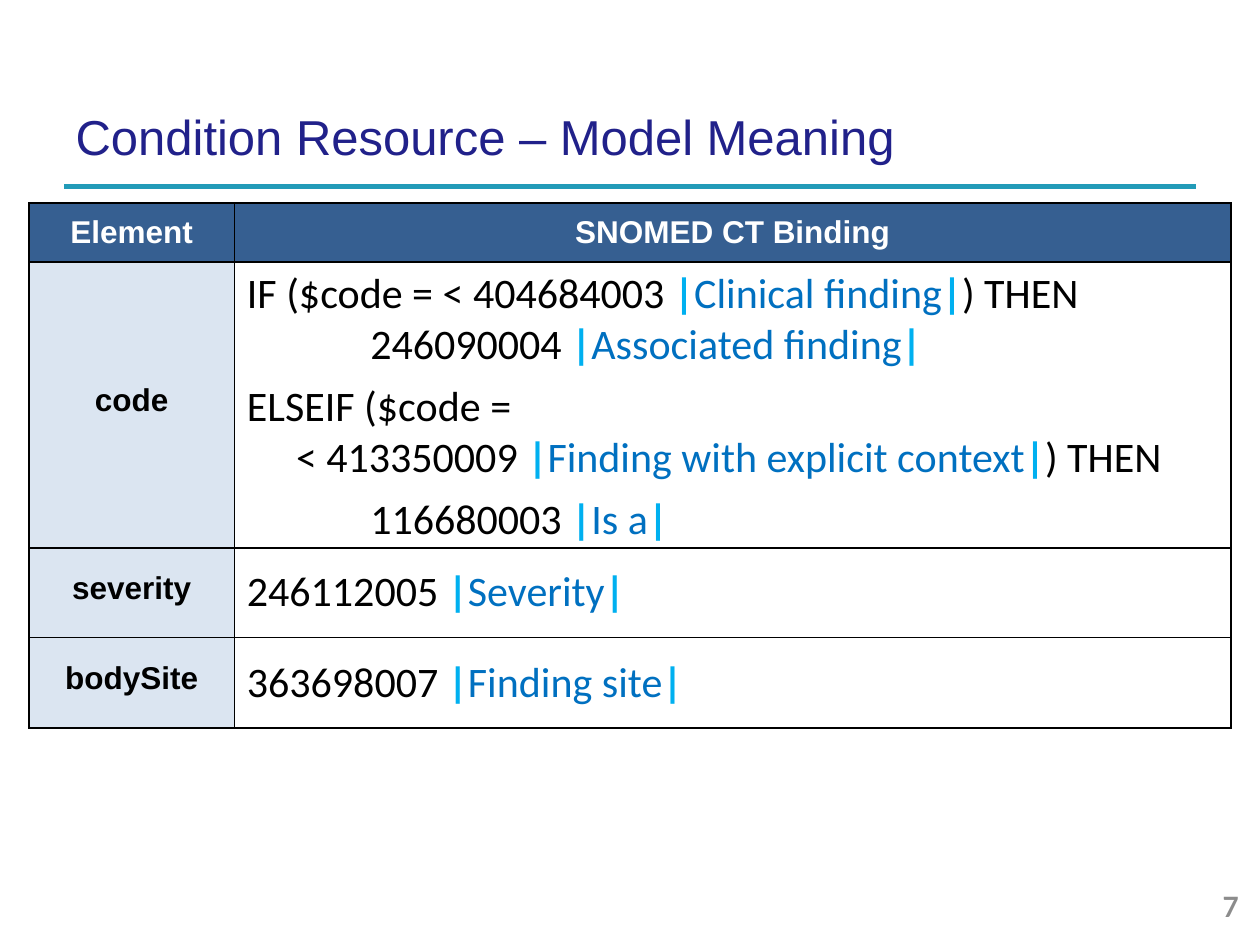
from lxml.etree import SubElement
from pptx import Presentation
from pptx.dml.color import RGBColor
from pptx.enum.shapes import MSO_CONNECTOR
from pptx.enum.text import MSO_ANCHOR, MSO_AUTO_SIZE, PP_ALIGN
from pptx.oxml.ns import qn
from pptx.util import Inches, Pt

HEADERS = ["Element", "SNOMED CT Binding"]
# Each binding line: text with a |term|, left margin, first-line indent, space before, alignment
JUSTIFIED, LEFT = PP_ALIGN.JUSTIFY, PP_ALIGN.LEFT
BINDINGS = {
    "code": [
        ("IF ($code = < 404684003 |Clinical finding|) THEN", 0.33, -0.33, 0, JUSTIFIED),
        ("246090004 |Associated finding|", 0.98, 0, 0, JUSTIFIED),
        ("ELSEIF ($code = ", 0.33, -0.33, 6, JUSTIFIED),
        ("< 413350009 |Finding with explicit context|) THEN", 0.33, 0.06, 0, JUSTIFIED),
        ("116680003 |Is a|", 0.98, 0, 6, LEFT),
    ],
    "severity": [("246112005 |Severity|", 0.13, -0.13, 0, JUSTIFIED)],
    "bodySite": [("363698007 |Finding site|", 0.13, -0.13, 0, JUSTIFIED)],
}
COLUMN_WIDTHS = [1.63, 7.91]
ROW_HEIGHTS = [0.47, 2.27, 0.71, 0.72]


def color(value):
    return RGBColor.from_string(value)


def set_values(target, values):
    for name, value in values.items():
        setattr(target, name, value)


class SlideBuilder:
    title_font = {"name": "Arial", "size": Pt(28), "bold": False}
    number_font = {"name": "Lato", "size": Pt(16), "bold": True}
    label_font = {"name": "Arial", "size": Pt(18), "bold": True}
    code_font = {"name": "Calibri", "size": Pt(24), "bold": False}
    bar_font = {**code_font, "bold": True}
    label_format = {"alignment": PP_ALIGN.CENTER, "space_before": Pt(2), "space_after": Pt(2)}

    def __init__(self, slide):
        self.slide = slide

    def add_run(self, paragraph, text, font, font_color):
        run = paragraph.add_run()
        run.text = text
        set_values(run.font, font)
        run.font.color.rgb = color(font_color)

    def title(self, text, left, top, width, height):
        shape = self.slide.shapes.title
        set_values(shape, {"left": Inches(left), "top": Inches(top),
                           "width": Inches(width), "height": Inches(height)})
        set_values(shape.text_frame, {
            "vertical_anchor": MSO_ANCHOR.BOTTOM, "word_wrap": True,
            "auto_size": MSO_AUTO_SIZE.NONE,
            "margin_left": Inches(0.1), "margin_right": Inches(0.1),
            "margin_top": Inches(0.1), "margin_bottom": Inches(0.1)})
        paragraph = shape.text_frame.paragraphs[0]
        paragraph.alignment = PP_ALIGN.LEFT
        self.add_run(paragraph, text, self.title_font, "21218A")

    def rule(self, left, right, top):
        connector = self.slide.shapes.add_connector(
            MSO_CONNECTOR.STRAIGHT, Inches(left), Inches(top), Inches(right), Inches(top))
        connector.line.color.rgb = color("229BB8")
        connector.line.width = Pt(3)
        SubElement(connector._element.spPr, qn("a:effectLst"))

    def page_number(self, text, left, top, width, height):
        box = self.slide.shapes.add_textbox(
            Inches(left), Inches(top), Inches(width), Inches(height))
        set_values(box.text_frame, {"word_wrap": True, "vertical_anchor": MSO_ANCHOR.MIDDLE})
        paragraph = box.text_frame.paragraphs[0]
        paragraph.alignment = PP_ALIGN.RIGHT
        self.add_run(paragraph, text, self.number_font, "8C8C8C")

    def format_cell(self, cell, fill):
        """Centre the text vertically, then draw 1 pt black borders and the fill."""
        cell.vertical_anchor = MSO_ANCHOR.MIDDLE
        properties = cell._tc.get_or_add_tcPr()
        for side in ("a:lnL", "a:lnR", "a:lnT", "a:lnB"):
            line = SubElement(properties, qn(side), w=str(Pt(1)))
            SubElement(SubElement(line, qn("a:solidFill")), qn("a:srgbClr"), val="000000")
        cell.fill.solid()
        cell.fill.fore_color.rgb = color(fill)

    def label_cell(self, cell, text, font_color, fill, line_spacing=None):
        self.format_cell(cell, fill)
        paragraph = cell.text_frame.paragraphs[0]
        set_values(paragraph, {**self.label_format, "line_spacing": line_spacing})
        self.add_run(paragraph, text, self.label_font, font_color)

    def binding_cell(self, cell, lines):
        self.format_cell(cell, "FFFFFF")
        frame = cell.text_frame
        for index, (text, margin, indent, space_before, alignment) in enumerate(lines):
            paragraph = frame.add_paragraph() if index else frame.paragraphs[0]
            set_values(paragraph, {"alignment": alignment, "space_before": Pt(space_before)})
            properties = paragraph._p.get_or_add_pPr()
            properties.set("marL", str(Inches(margin)))
            properties.set("indent", str(Inches(indent)))
            self.add_expression(paragraph, text)

    def add_expression(self, paragraph, text):
        """Write a line whose |term| is blue between bold light blue bars."""
        code, bar, rest = text.partition("|")
        self.add_run(paragraph, code, self.code_font, "000000")
        if bar:
            term, bar, tail = rest.partition("|")
            self.add_run(paragraph, bar, self.bar_font, "00B0F0")
            self.add_run(paragraph, term, self.code_font, "0070C0")
            self.add_run(paragraph, bar, self.bar_font, "00B0F0")
            if tail:
                self.add_run(paragraph, tail, self.code_font, "000000")

    def binding_table(self, left, top):
        table = self.slide.shapes.add_table(
            len(ROW_HEIGHTS), len(COLUMN_WIDTHS), Inches(left), Inches(top),
            Inches(sum(COLUMN_WIDTHS)), Inches(sum(ROW_HEIGHTS))).table
        set_values(table, {"first_row": False, "horz_banding": False})
        for column, width in zip(table.columns, COLUMN_WIDTHS):
            column.width = Inches(width)
        for row, height in zip(table.rows, ROW_HEIGHTS):
            row.height = Inches(height)
        for index, header in enumerate(HEADERS):
            self.label_cell(table.cell(0, index), header, "FFFFFF", "365F91")
        for index, (element, lines) in enumerate(BINDINGS.items(), 1):
            self.label_cell(table.cell(index, 0), element, "000000", "DBE5F1", Pt(15))
            self.binding_cell(table.cell(index, 1), lines)


def main():
    presentation = Presentation()
    presentation.slide_width, presentation.slide_height = Inches(10), Inches(7.5)
    builder = SlideBuilder(presentation.slides.add_slide(presentation.slide_layouts[5]))
    builder.rule(0.51, 9.49, 1.48)
    builder.title("Condition Resource – Model Meaning", 0.5, 0.81, 9, 0.6)
    builder.page_number("7", 9.36, 7.03, 0.57, 0.32)
    builder.binding_table(0.23, 1.61)
    presentation.save("out.pptx")


if __name__ == "__main__":
    main()
